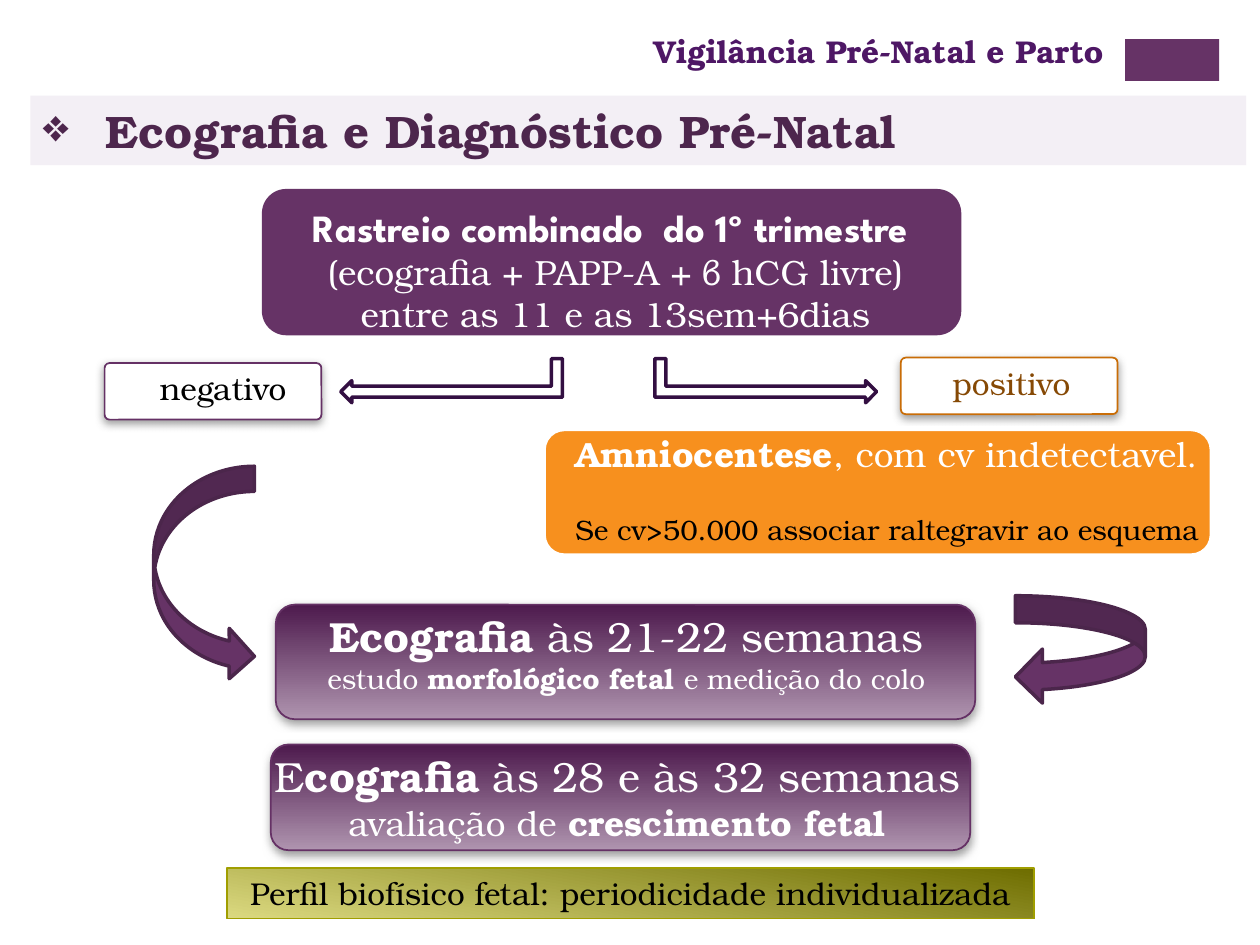
from dataclasses import dataclass
from typing import NamedTuple, Optional

from lxml import etree
from pptx import Presentation
from pptx import util as u
from pptx.dml.color import RGBColor
from pptx.enum import shapes, text
from pptx.oxml import parse_xml
from pptx.oxml.ns import nsdecls, qn

MSO = shapes.MSO_SHAPE
AL = text.PP_ALIGN


@dataclass(frozen=True)
class Theme:
    serif: str = "TeX Gyre Bonum"
    display: str = "League Spartan"
    white: str = "FFFFFF"
    black: str = "000000"
    purple: str = "663366"
    edge: str = "653165"
    band: str = "F3EFF5"
    title: str = "4D264D"
    header: str = "4E1765"
    orange: str = "F7901E"
    amber: str = "C96D07"
    brown: str = "864905"
    bent_edge: str = "330F42"
    curve_edge: str = "4B264B"
    olive_edge: str = "A09E00"
    plum: tuple = ("4D1A4D", "AF94AF")
    olive: tuple = ("6E6D00", "DBD980")
    shadow: str = "808080"
    sz_title: int = 26
    sz_head: int = 24
    sz_lead: int = 22
    sz_body: int = 20
    sz_label: int = 18
    sz_note: int = 16


T = Theme()


class Box(NamedTuple):
    x: float
    y: float
    w: float
    h: float

    def emu(self) -> list:
        return [u.Cm(v) for v in self]


class Run(NamedTuple):
    text: str
    size: int
    color: str = T.white
    bold: bool = False
    font: str = T.serif


class Para(NamedTuple):
    runs: list
    align: AL = AL.CENTER
    before: float = 0


@dataclass
class Block:
    kind: MSO
    box: Box
    fill: object
    line: Optional[str] = None
    width: float = 1
    adj: Optional[float] = None
    angle: float = 90
    rot: float = 0
    flip: bool = False
    shadow: bool = False


def write(tf, paras: list) -> None:
    tf.word_wrap = True
    for i, para in enumerate(paras):
        p = tf.paragraphs[0] if i == 0 else tf.add_paragraph()
        p.alignment = para.align
        if para.before:
            p.space_before = u.Pt(para.before)
        for item in para.runs:
            r = p.add_run()
            r.text = item.text
            r.font.name, r.font.size, r.font.bold = item.font, u.Pt(item.size), item.bold
            r.font.color.rgb = RGBColor.from_string(item.color)


def add_shadow(sp) -> None:
    effects = sp._element.spPr.find(qn("a:effectLst"))
    effects.append(parse_xml(
        f'<a:outerShdw {nsdecls("a")} blurRad="{u.Pt(5)}" dist="{u.Pt(2)}" dir="5400000" '
        f'rotWithShape="0"><a:srgbClr val="{T.shadow}"><a:alpha val="75000"/></a:srgbClr>'
        '</a:outerShdw>'))


def add_block(s, b: Block):
    sp = s.shapes.add_shape(b.kind, *b.box.emu())
    sp.shadow.inherit = False
    if isinstance(b.fill, tuple):
        sp.fill.gradient()
        sp.fill.gradient_angle = 360 - b.angle
        for stop, color in zip(sp.fill.gradient_stops, b.fill):
            stop.color.rgb = RGBColor.from_string(color)
    else:
        sp.fill.solid()
        sp.fill.fore_color.rgb = RGBColor.from_string(b.fill)
    if b.line:
        sp.line.color.rgb = RGBColor.from_string(b.line)
        sp.line.width = u.Pt(b.width)
    else:
        sp.line.fill.background()
    if b.adj is not None:
        sp.adjustments[0] = b.adj
    sp.rotation = b.rot
    if b.flip:
        sp._element.spPr.xfrm.set("flipH", "1")
    if b.shadow:
        add_shadow(sp)
    return sp


def add_text(s, box: Box, *paras: Para) -> None:
    write(s.shapes.add_textbox(*box.emu()).text_frame, list(paras))


def add_title(s) -> None:
    sp = s.shapes.title
    sp.left, sp.top, sp.width, sp.height = Box(0.61, 1.93, 24.51, 1.4).emu()
    sp.fill.solid()
    sp.fill.fore_color.rgb = RGBColor.from_string(T.band)
    tf = sp.text_frame
    tf.auto_size = text.MSO_AUTO_SIZE.NONE
    tf.vertical_anchor = text.MSO_ANCHOR.MIDDLE
    write(tf, [Para([Run("Ecografia e Diagnóstico Pré-Natal", T.sz_title, T.title, True)], AL.LEFT)])
    pPr = tf.paragraphs[0]._p.get_or_add_pPr()
    pPr.set("marL", str(u.Cm(1.27)))
    pPr.set("indent", str(-u.Cm(1.27)))
    etree.SubElement(pPr, qn("a:buChar")).set("char", "❖")


def add_label(s, x: float, y: float, inset: float, label: str, line: str, color: str) -> None:
    add_block(s, Block(MSO.ROUNDED_RECTANGLE, Box(x, y, 4.37, 1.14), T.white, line, adj=0.086, shadow=True))
    add_text(s, Box(x + inset, y, 3.38, 1.02), Para([Run(label, T.sz_label, color)], AL.LEFT))


def add_plum(s, box: Box) -> None:
    add_block(s, Block(MSO.ROUNDED_RECTANGLE, box, T.plum, T.edge, adj=0.167, shadow=True))


def main() -> None:
    prs = Presentation()
    prs.slide_width, prs.slide_height = u.Cm(25.4), u.Cm(19.05)
    s = prs.slides.add_slide(prs.slide_layouts[5])

    # Header and title
    add_block(s, Block(MSO.RECTANGLE, Box(22.68, 0.79, 1.9, 0.84), T.purple))
    add_title(s)
    add_text(s, Box(5.11, 0.53, 17.6, 1.02),
             Para([Run("Vigilância Pré-Natal e Parto ", T.sz_label, T.header, True)], AL.RIGHT))

    # First-trimester screening
    add_block(s, Block(MSO.ROUNDED_RECTANGLE, Box(5.28, 3.81, 14.1, 2.95), T.purple, adj=0.167))
    add_text(s, Box(5.08, 3.99, 14.66, 2.9),
             Para([Run("Rastreio combinado  do 1º trimestre ", T.sz_lead, bold=True, font=T.display)]),
             Para([Run("(ecografia + PAPP-A + β hCG livre)", T.sz_body)]),
             Para([Run("entre as 11 e as 13sem+6dias", T.sz_body)]))

    # Outcomes
    add_label(s, 2.11, 7.32, 0.86, "negativo", T.edge, T.black)
    add_label(s, 18.16, 7.21, 0.79, "positivo", T.amber, T.brown)

    # Amniocentesis after a positive result
    add_block(s, Block(MSO.ROUNDED_RECTANGLE, Box(10.95, 8.64, 13.49, 2.57), T.orange, T.white, 3))
    add_text(s, Box(11.35, 8.59, 13.69, 2.57),
             Para([Run("Amniocentese", T.sz_body, bold=True),
                   Run(", com cv indetectavel", T.sz_body), Run(".", T.sz_label)], AL.LEFT),
             Para([Run("Se cv>50.000 associar raltegravir ao esquema", T.sz_note, T.black)],
                  AL.LEFT, before=22))

    # Later ultrasounds
    add_plum(s, Box(5.56, 12.19, 14.1, 2.31))
    add_text(s, Box(2.21, 12.19, 20.83, 1.96),
             Para([Run("Ecografia", T.sz_head, bold=True), Run(" às 21-22 semanas", T.sz_head)]),
             Para([Run("estudo ", T.sz_note), Run("morfológico fetal ", T.sz_note, bold=True),
                   Run("e medição do colo", T.sz_note)]))
    add_plum(s, Box(5.46, 15.01, 14.1, 2.13))
    add_text(s, Box(4.8, 15.01, 15.29, 2.13),
             Para([Run("E", T.sz_head), Run("cografia", T.sz_head, bold=True),
                   Run(" às 28 e às 32 semanas ", T.sz_head), Run("avaliação de ", T.sz_body),
                   Run("crescimento fetal", T.sz_body, bold=True)]))

    # Biophysical profile
    sp = add_block(s, Block(MSO.RECTANGLE, Box(4.57, 17.5, 16.28, 1.02), T.olive, T.olive_edge, angle=100))
    write(sp.text_frame, [Para([Run("Perfil biofísico fetal: periodicidade individualizada",
                                    T.sz_label, T.black)])])

    # Arrows
    for x, rot, flip in ((14.99, 90, False), (8.66, 270, True)):
        add_block(s, Block(MSO.BENT_UP_ARROW, Box(x, 5.44, 0.89, 4.47), T.white, T.bent_edge, 2,
                           rot=rot, flip=flip))
    for kind, box in ((MSO.CURVED_RIGHT_ARROW, Box(3.1, 9.4, 2.03, 4.34)),
                      (MSO.CURVED_LEFT_ARROW, Box(20.47, 12.01, 2.62, 2.18))):
        add_block(s, Block(kind, box, T.purple, T.curve_edge, 2))

    prs.save("out.pptx")


if __name__ == "__main__":
    main()
